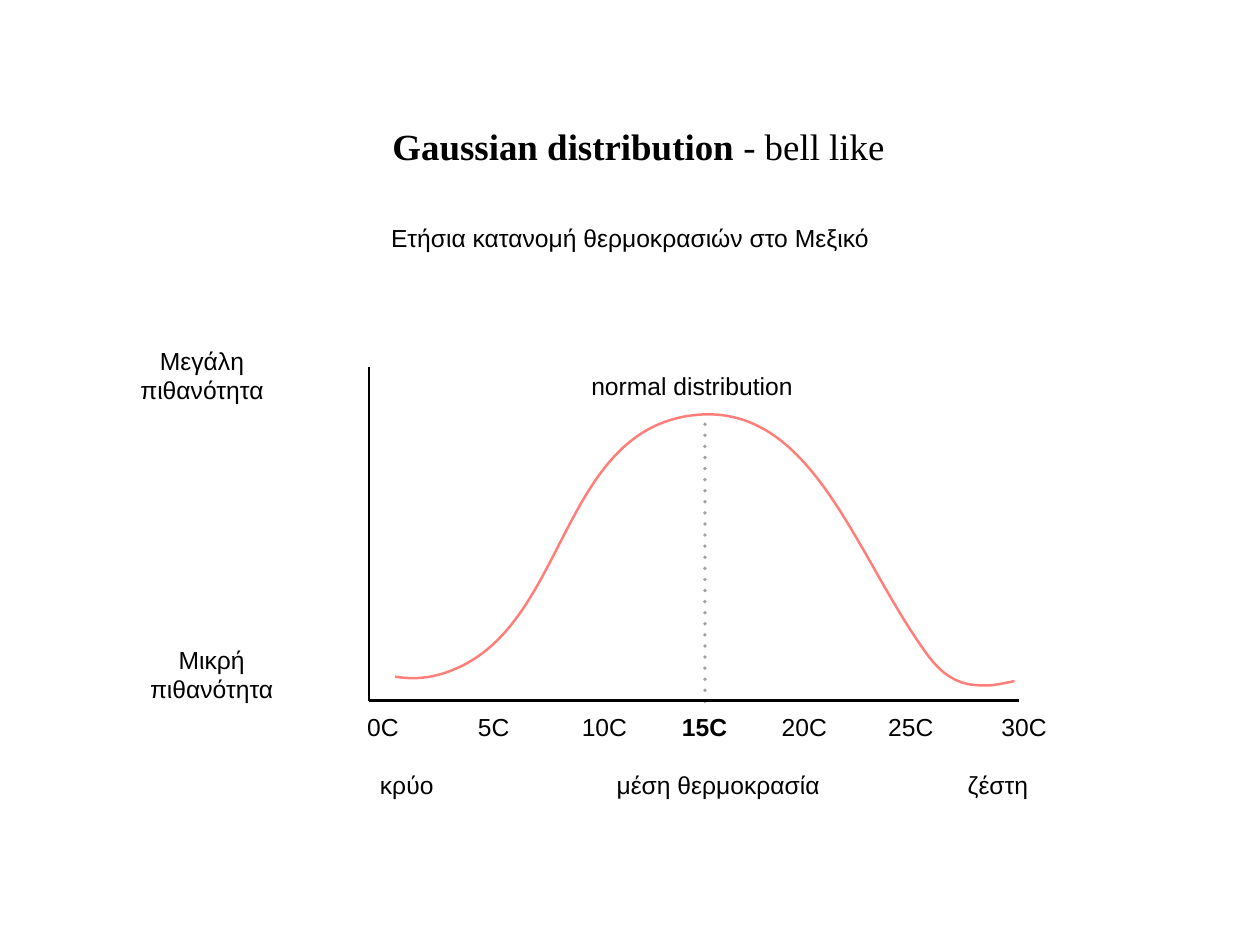
from dataclasses import dataclass

import lxml.etree
import pptx
import pptx.dml.color
import pptx.enum.shapes
import pptx.enum.text
import pptx.oxml.ns
import pptx.util

SLIDE_W, SLIDE_H = pptx.util.Inches(14.22), pptx.util.Inches(10.67)
COLUMNS, ROWS = 100, 75
LINE_ROWS = 3.09

Point = tuple[float, float]
Align = pptx.enum.text.PP_ALIGN
Anchor = pptx.enum.text.MSO_ANCHOR
AutoSize = pptx.enum.text.MSO_AUTO_SIZE
qn = pptx.oxml.ns.qn


@dataclass(frozen=True)
class Theme:
    ink: str = "000000"
    curve: str = "FF7E79"
    body_font: str = "Arial"
    title_font: str = "Times New Roman"
    body_size: float = 20
    title_size: float = 30
    title_leading: float = 50
    title_gap: float = 12
    line_width: float = 2
    dot_width: float = 3
    dot_opacity: int = 36


THEME = Theme()


@dataclass(frozen=True)
class Run:
    text: str
    bold: bool = False


@dataclass(frozen=True)
class Label:
    runs: tuple[Run, ...]
    col: float
    row: float
    cols: float
    rows: float = LINE_ROWS
    wrap: bool = False
    anchor: Anchor = Anchor.MIDDLE
    title: bool = False


@dataclass(frozen=True)
class Segment:
    start: Point
    end: Point
    dotted: bool = False


TICK_ROW, NOTE_ROW = 57.64, 62.28
TICKS = [("0C", 30.39, 3.38), ("5C", 39.18, 3.38), ("10C", 47.97, 4.43),
         ("15C", 55.92, 4.43), ("20C", 63.83, 4.43), ("25C", 72.29, 4.43),
         ("30C", 81.27, 4.43)]
MEAN_TICK = "15C"

LABELS = [
    Label((Run("Gaussian distribution", True), Run(" - bell like")),
          51.09, 10.86, 40.72, 9.21, title=True),
    Label((Run("Ετήσια κατανομή θερμοκρασιών στο Μεξικό"),),
          50, 43.02, 80.45, 51.45, wrap=True, anchor=Anchor.TOP),
    Label((Run("Μεγάλη πιθανότητα"),), 16.03, 29.78, 12, 2 * LINE_ROWS, wrap=True),
    Label((Run("Μικρή πιθανότητα"),), 16.8, 53.49, 12, 2 * LINE_ROWS, wrap=True),
    Label((Run("normal distribution"),), 54.92, 30.58, 17.09),
    Label((Run("κρύο"),), 32.28, NOTE_ROW, 5.3),
    Label((Run("μέση θερμοκρασία"),), 57, NOTE_ROW, 17.3),
    Label((Run("ζέστη"),), 79.2, NOTE_ROW, 5.9),
    *(Label((Run(text, text == MEAN_TICK),), col, TICK_ROW, cols)
      for text, col, cols in TICKS),
]

ORIGIN = (29.3, 55.6)
SEGMENTS = [
    Segment(ORIGIN, (29.3, 29.1)),
    Segment((80.87, 55.6), ORIGIN),
    Segment((55.95, 55.67), (55.95, 33.11), dotted=True),
]

BELL_START = (31.36, 53.7)
BELL_CURVES = [
    ((32.98, 53.98), (34.53, 53.77), (36.01, 53.14)),
    ((44.87, 49.55), (44.44, 34.79), (54.43, 33.04)),
    ((64.28, 31.35), (67.65, 43.72), (73.49, 51.8)),
    ((74.19, 52.79), (75.04, 53.7), (76.23, 54.12)),
    ((76.93, 54.4), (77.78, 54.4), (78.55, 54.4)),
    ((79.18, 54.33), (79.89, 54.19), (80.52, 54.05)),
]


def x_at(col: float) -> int:
    return round(SLIDE_W * col / COLUMNS)


def y_at(row: float) -> int:
    return round(SLIDE_H * row / ROWS)


def rgb(value: str) -> pptx.dml.color.RGBColor:
    return pptx.dml.color.RGBColor.from_string(value)


def add_label(s: pptx.slide.Slide, label: Label) -> None:
    sp = s.shapes.add_textbox(
        x_at(label.col - label.cols / 2), y_at(label.row - label.rows / 2),
        x_at(label.cols), y_at(label.rows))
    tf = sp.text_frame
    tf.word_wrap = label.wrap
    tf.auto_size = AutoSize.NONE if label.wrap else AutoSize.SHAPE_TO_FIT_TEXT
    tf.vertical_anchor = label.anchor
    tf.margin_left = tf.margin_right = pptx.util.Inches(0.06)
    tf.margin_top = tf.margin_bottom = pptx.util.Inches(0.06)
    p = tf.paragraphs[0]
    p.alignment = Align.LEFT if label.title else Align.CENTER
    if label.title:
        p.line_spacing = pptx.util.Pt(THEME.title_leading)
        p.space_before = pptx.util.Pt(THEME.title_gap)
    for run in label.runs:
        r = p.add_run()
        r.text = run.text
        r.font.name = THEME.title_font if label.title else THEME.body_font
        r.font.size = pptx.util.Pt(THEME.title_size if label.title else THEME.body_size)
        r.font.bold = run.bold
        r.font.color.rgb = rgb(THEME.ink)


def dot_line(ln: lxml.etree._Element) -> None:
    ln.set("cap", "rnd")
    color = ln.find(qn("a:solidFill")).find(qn("a:srgbClr"))
    lxml.etree.SubElement(color, qn("a:alpha"), val=str(THEME.dot_opacity * 1000))
    dash = lxml.etree.SubElement(ln, qn("a:custDash"))
    lxml.etree.SubElement(dash, qn("a:ds"), d="100000", sp="200000")


def add_segment(s: pptx.slide.Slide, segment: Segment) -> None:
    (col1, row1), (col2, row2) = segment.start, segment.end
    sp = s.shapes.add_connector(
        pptx.enum.shapes.MSO_CONNECTOR.STRAIGHT,
        x_at(col1), y_at(row1), x_at(col2), y_at(row2))
    sp.line.color.rgb = rgb(THEME.ink)
    sp.line.width = pptx.util.Pt(THEME.dot_width if segment.dotted else THEME.line_width)
    sp_pr = sp._element.spPr
    if segment.dotted:
        dot_line(sp_pr.find(qn("a:ln")))
    lxml.etree.SubElement(sp_pr, qn("a:effectLst"))


def add_bell(s: pptx.slide.Slide) -> None:
    builder = s.shapes.build_freeform(x_at(BELL_START[0]), y_at(BELL_START[1]))
    builder.add_line_segments(
        [(x_at(col), y_at(row)) for _, _, (col, row) in BELL_CURVES], close=False)
    sp = builder.convert_to_shape()
    straights = list(sp._element.spPr.iter(qn("a:lnTo")))
    for straight, curve in zip(straights, BELL_CURVES):
        bend = lxml.etree.Element(qn("a:cubicBezTo"))
        for col, row in curve:
            lxml.etree.SubElement(bend, qn("a:pt"),
                                  x=str(x_at(col) - sp.left), y=str(y_at(row) - sp.top))
        straight.getparent().replace(straight, bend)
    sp.shadow.inherit = False
    sp.fill.background()
    sp.line.color.rgb = rgb(THEME.curve)
    sp.line.width = pptx.util.Pt(THEME.line_width)


def main() -> None:
    prs = pptx.Presentation()
    prs.slide_width, prs.slide_height = SLIDE_W, SLIDE_H
    s = prs.slides.add_slide(prs.slide_layouts[6])
    for segment in SEGMENTS:
        add_segment(s, segment)
    add_bell(s)
    for label in LABELS:
        add_label(s, label)
    prs.save("out.pptx")


if __name__ == "__main__":
    main()
